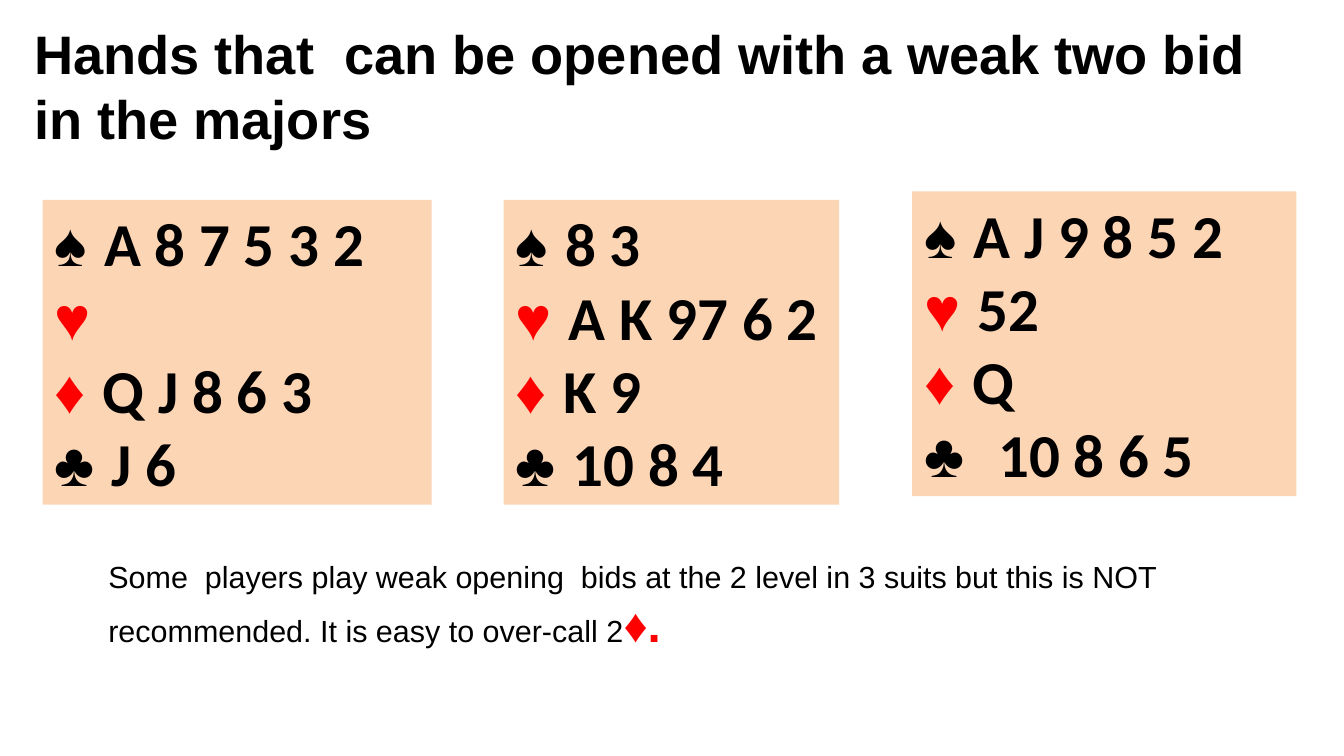
import dataclasses

import pptx
import pptx.dml.color
import pptx.enum.shapes
import pptx.enum.text
import pptx.util

Inches = pptx.util.Inches


@dataclasses.dataclass(frozen=True)
class Theme:
    """Colours, fonts and type sizes of the slide."""
    black: str = "000000"
    red: str = "FF0000"
    card: str = "FCD5B5"
    text_font: str = "Arial"
    card_font: str = "Calibri"
    title_size: int = 32
    hand_size: int = 36
    note_size: int = 18
    suit_size: int = 28


def rgb(value):
    """Return the colour for a hexadecimal value."""
    return pptx.dml.color.RGBColor.from_string(value)


def add_text(paragraph, text, *, size, font, color, bold=False):
    """Append formatted text to a paragraph."""
    run = paragraph.add_run()
    run.text = text
    run.font.size = pptx.util.Pt(size)
    run.font.name = font
    run.font.bold = bold
    run.font.color.rgb = rgb(color)


class SlideBuilder:
    """Places styled elements on the current slide."""

    def __init__(self, slide, theme):
        """Keep the slide and its theme."""
        self.slide = slide
        self.theme = theme

    def prepare_frame(self, shape):
        """Make the text of a shape wrap from the top left."""
        frame = shape.text_frame
        frame.word_wrap = True
        frame.auto_size = pptx.enum.text.MSO_AUTO_SIZE.NONE
        frame.vertical_anchor = pptx.enum.text.MSO_ANCHOR.TOP
        frame.paragraphs[0].alignment = pptx.enum.text.PP_ALIGN.LEFT
        return frame

    def title(self, text, left, top, width, height):
        """Move and fill the title placeholder."""
        shape = self.slide.shapes.title
        shape.left, shape.top = Inches(left), Inches(top)
        shape.width, shape.height = Inches(width), Inches(height)
        paragraph = self.prepare_frame(shape).paragraphs[0]
        add_text(paragraph, text, size=self.theme.title_size,
                 font=self.theme.text_font, color=self.theme.black, bold=True)

    def hand(self, holdings, left, top, width, height=2.5):
        """Draw a card that lists one bridge hand by suit."""
        theme = self.theme
        shape = self.slide.shapes.add_shape(
            pptx.enum.shapes.MSO_SHAPE.RECTANGLE,
            Inches(left), Inches(top), Inches(width), Inches(height))
        shape.shadow.inherit = False
        shape.fill.solid()
        shape.fill.fore_color.rgb = rgb(theme.card)
        shape.line.fill.background()
        frame = self.prepare_frame(shape)
        suits = zip("♠♥♦♣", (theme.black, theme.red, theme.red, theme.black), holdings)
        for index, (suit, color, cards) in enumerate(suits):
            paragraph = frame.add_paragraph() if index else frame.paragraphs[0]
            paragraph.alignment = pptx.enum.text.PP_ALIGN.LEFT
            add_text(paragraph, suit + cards[:len(cards) - len(cards.lstrip())],
                     size=theme.hand_size, font=theme.text_font, color=color, bold=True)
            if cards:
                add_text(paragraph, cards.lstrip(), size=theme.hand_size,
                         font=theme.card_font, color=theme.black, bold=True)

    def note(self, text, ending, left, top, width, height):
        """Write a note that ends with a red suit symbol."""
        theme = self.theme
        shape = self.slide.shapes.add_textbox(
            Inches(left), Inches(top), Inches(width), Inches(height))
        paragraph = self.prepare_frame(shape).paragraphs[0]
        add_text(paragraph, text, size=theme.note_size,
                 font=theme.text_font, color=theme.black)
        add_text(paragraph, ending, size=theme.suit_size,
                 font=theme.text_font, color=theme.red, bold=True)


def main():
    """Build and save the slide."""
    presentation = pptx.Presentation()
    presentation.slide_width = Inches(11.02)
    presentation.slide_height = Inches(6.2)
    slide = presentation.slides.add_slide(presentation.slide_layouts.get_by_name("Title Only"))
    builder = SlideBuilder(slide, Theme())
    builder.title("Hands that  can be opened with a weak two bid in the majors",
                  0.18, 0.12, 10.64, 1.16)
    builder.hand((" A 8 7 5 3 2", "", " Q J 8 6 3", " J 6"), 0.35, 1.64, 3.19)
    builder.hand((" 8 3", " A K 97 6 2", " K 9", " 10 8 4"), 4.13, 1.64, 2.75)
    builder.hand((" A J 9 8 5 2", " 52", " Q", "  10 8 6 5"), 7.48, 1.57, 3.15)
    builder.note("Some  players play weak opening  bids at the 2 level in 3 suits "
                 "but this is NOT recommended. It is easy to over-call 2", "♦.",
                 0.79, 4.53, 9.25, 0.85)
    presentation.save("out.pptx")


if __name__ == "__main__":
    main()
